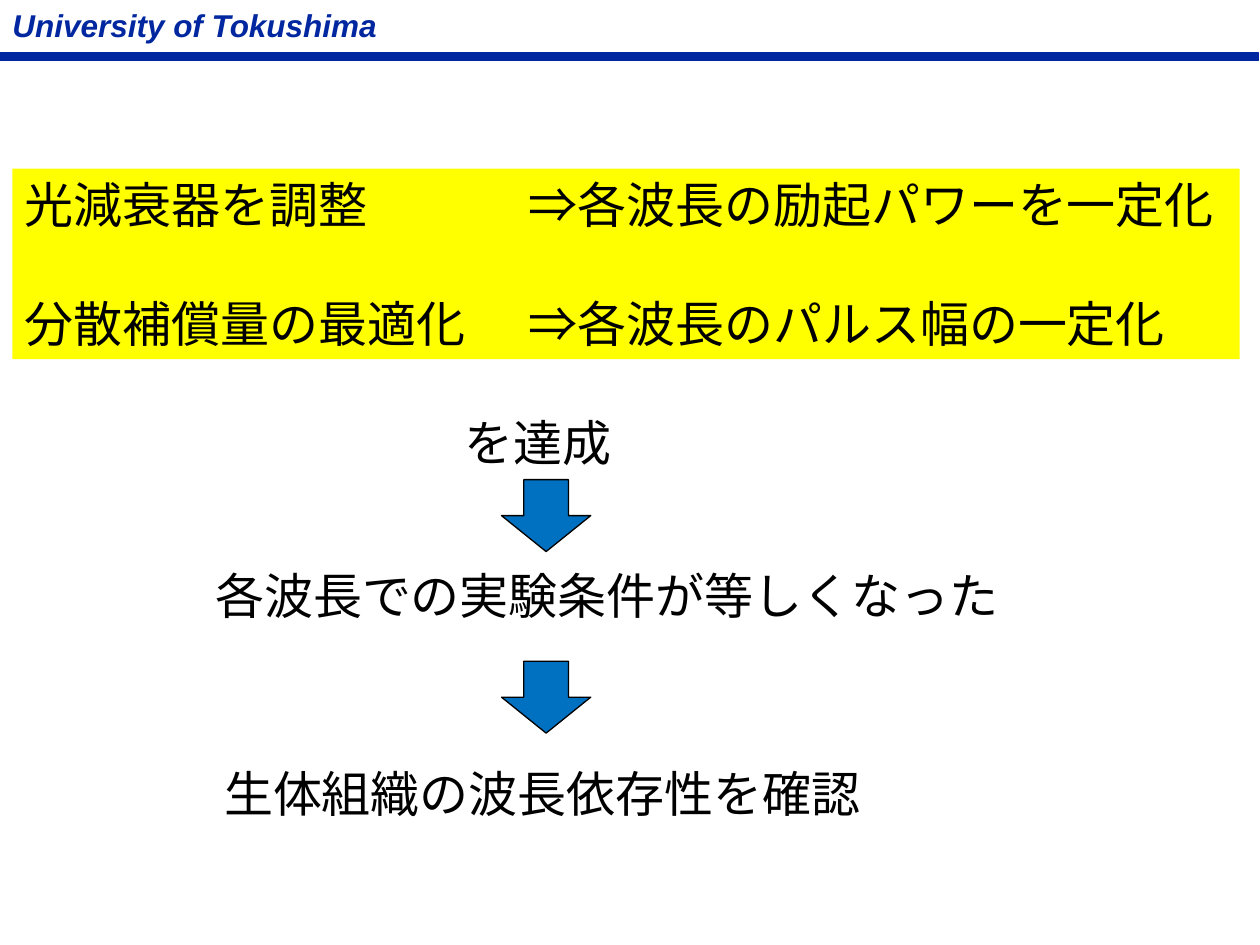
from pptx import Presentation
from pptx import util as u
from pptx.dml.color import RGBColor
from pptx.enum import lang, shapes, text
from pptx.oxml.ns import qn
from lxml import etree

NAVY, YELLOW, BLUE, BLACK = "00279F", "FFFF00", "0070C0", "000000"


def add_block(kind, left, top, width, height, fill, line=None, weight=0.75):
    block = page.shapes.add_shape(
        kind, u.Cm(left), u.Cm(top), u.Cm(width), u.Cm(height))
    block.shadow.inherit = False
    block.fill.solid()
    block.fill.fore_color.rgb = RGBColor.from_string(fill)
    if line:
        block.line.color.rgb = RGBColor.from_string(line)
        block.line.width = u.Pt(weight)
    else:
        block.line.fill.background()
    return block


def write(para, words, size=28, color=BLACK):
    para.alignment = text.PP_ALIGN.LEFT
    span = para.add_run()
    span.text = words
    span.font.name = "Arial"
    span.font.size = u.Pt(size)
    span.font.color.rgb = RGBColor.from_string(color)
    return span


deck = Presentation()
deck.slide_width, deck.slide_height = u.Cm(25.4), u.Cm(19.05)
page = deck.slides.add_slide(deck.slide_layouts[6])

# Header: rule and university name
add_block(shapes.MSO_SHAPE.RECTANGLE, 0, 1.07, 25.37, 0.15, NAVY, NAVY, 1)
header = page.shapes.add_textbox(0, 0, u.Cm(7.92), u.Cm(1.02))
header.text_frame.word_wrap = False
name = write(header.text_frame.paragraphs[0], "University of Tokushima", 18, NAVY)
name.font.bold = name.font.italic = True

# Yellow panel: each adjustment and its effect, aligned on tab stops
panel = add_block(shapes.MSO_SHAPE.RECTANGLE, 0.25, 3.4, 24.74, 3.84, YELLOW)
frame = panel.text_frame
frame.word_wrap = True
frame.vertical_anchor = text.MSO_ANCHOR.TOP
adjustments = ["光減衰器を調整\t\t⇒各波長の励起パワーを一定化",
               "分散補償量の最適化\t⇒各波長のパルス幅の一定化"]
for index, words in enumerate(adjustments):
    para = frame.add_paragraph() if index else frame.paragraphs[0]
    if index:
        para.space_before = u.Pt(34)
    stops = etree.SubElement(para._p.get_or_add_pPr(), qn("a:tabLst"))
    for position in (7.62, 10.16):
        etree.SubElement(stops, qn("a:tab"), pos=str(u.Cm(position)), algn="l")
    span = write(para, words)
    span.font.language_id = lang.MSO_LANGUAGE_ID.JAPANESE

# Conclusions, one under the other
for words, left, top, width in [
        ("を達成", 9.12, 8.2, 3.5),
        ("各波長での実験条件が等しくなった", 4.09, 11.28, 16.46),
        ("生体組織の波長依存性を確認", 4.27, 15.27, 13.49)]:
    box = page.shapes.add_textbox(u.Cm(left), u.Cm(top), u.Cm(width), u.Cm(1.45))
    box.text_frame.word_wrap = False
    span = write(box.text_frame.paragraphs[0], words)
    span.font.language_id = lang.MSO_LANGUAGE_ID.JAPANESE

# Arrows between the conclusions
for top in (9.67, 13.33):
    add_block(shapes.MSO_SHAPE.DOWN_ARROW, 10.11, top, 1.8, 1.45, BLUE, BLACK)

deck.save("out.pptx")
